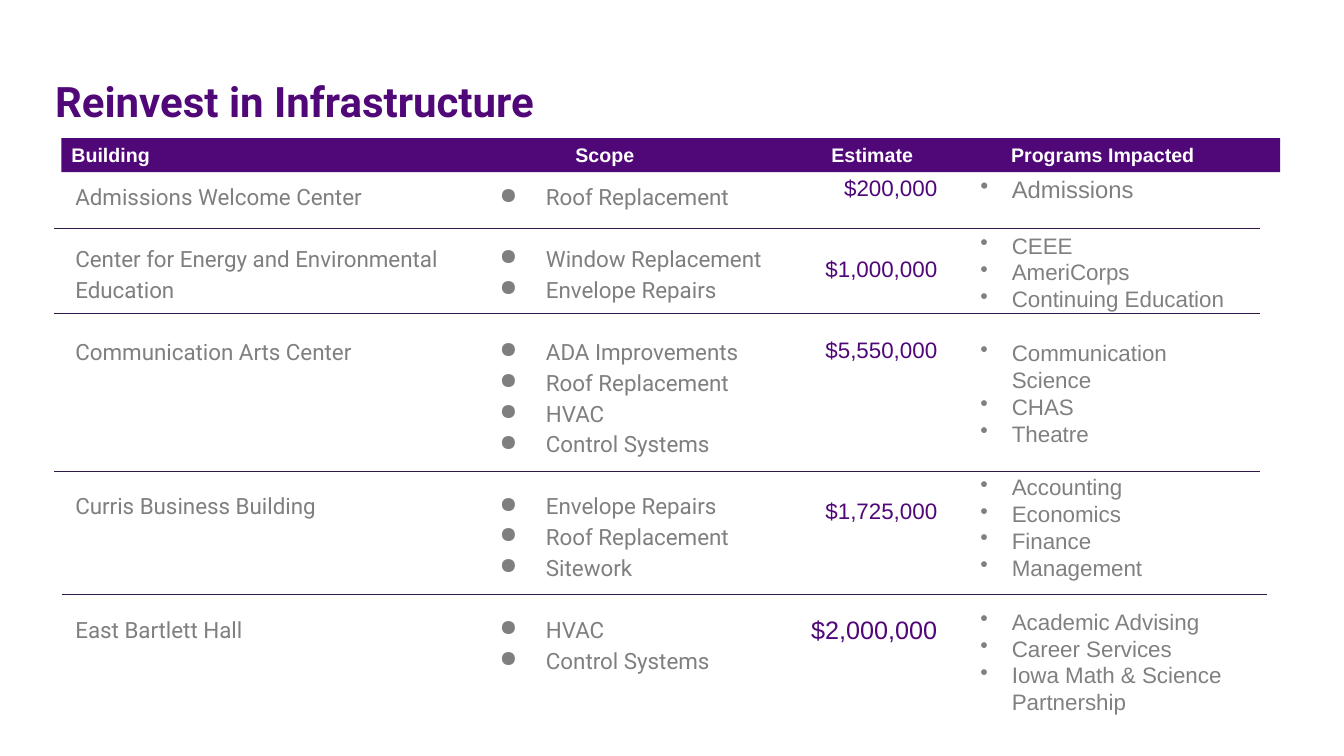
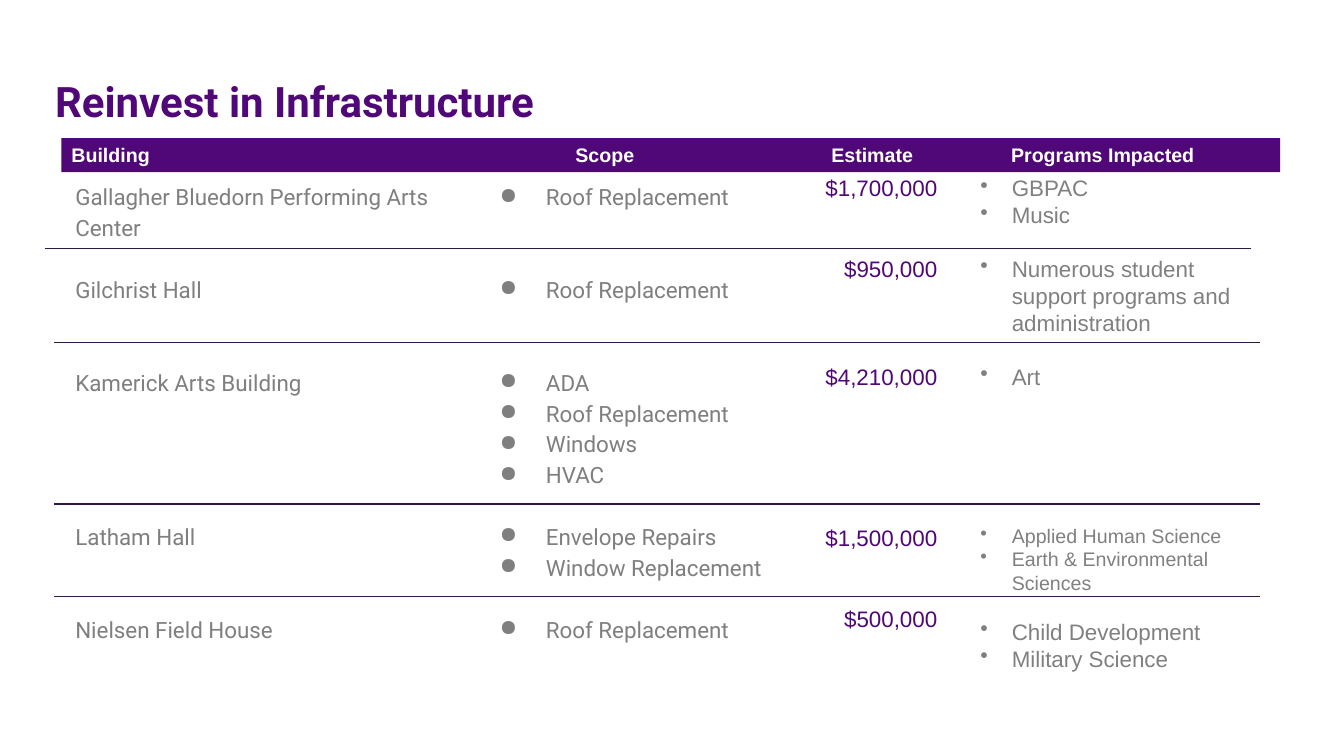
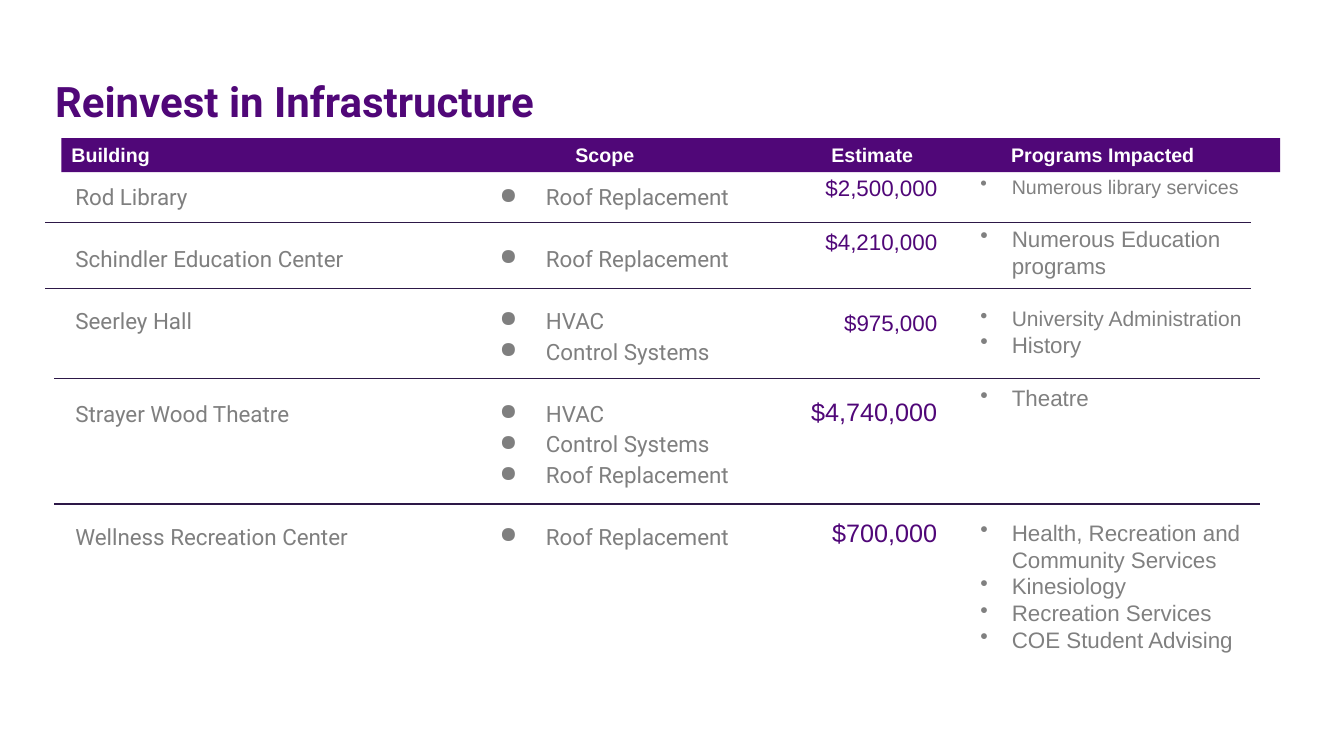
from collections import namedtuple
from dataclasses import dataclass

from lxml.etree import SubElement
from pptx import Presentation
from pptx.dml.color import RGBColor
from pptx.enum.shapes import MSO_CONNECTOR, MSO_SHAPE
from pptx.enum.text import MSO_ANCHOR, MSO_AUTO_SIZE, PP_ALIGN
from pptx.oxml.ns import qn
from pptx.util import Cm, Pt


@dataclass(frozen=True)
class Theme:
    purple: str = "500778"
    rule: str = "2D1847"
    grey: str = "7F7F7F"
    soft: str = "808080"
    white: str = "FFFFFF"
    head: str = "Roboto"
    body: str = "Arial"
    title: int = 30
    text: int = 16
    band: int = 14
    thin: float = 0.75


@dataclass(frozen=True)
class Style:
    font: str
    color: str
    pitch: float          # line height as a multiple of the type size
    pad: float            # inset above and below the text, in cm
    left: float = 0
    hang: float = 0
    mark: str = ""
    lead: float = 1.0
    align: PP_ALIGN = PP_ALIGN.LEFT
    grow: bool = False


T = Theme()
NAMES = Style(T.head, T.grey, 1.38, 0.25, left=0.51, lead=1.15)
SCOPE = Style(T.head, T.grey, 1.38, 0.25, left=1.7, hang=-1.17, mark="●", lead=1.15)
COSTS = Style(T.body, T.purple, 1.2, 0.13, align=PP_ALIGN.RIGHT, grow=True)
PROGS = Style(T.body, T.soft, 1.2, 0.13, left=0.79, hang=-0.79, mark="•", grow=True)

# Column boxes: left edge and width; all share one top
COLS = [(NAMES, 1.14, 10.41), (SCOPE, 11.81, 12.07),
        (COSTS, 18.69, 5.18), (PROGS, 24.46, 7.29)]
TOP = 4.27
TALL = 12.65
SPAN = 30.38              # length of every row rule
HEADS = ["Building", "Scope", "Estimate", "Programs Impacted"]
STOPS = [12.7, 19.15, 23.68]

Group = namedtuple("Group", "gap texts size")
Page = namedtuple("Page", "cols tall rules")


def grp(gap, *texts, size=T.text):
    """Lines that belong together, set off by a gap counted in lines."""
    return Group(gap, texts, size)


PAGES = [
    Page(
        cols=[
            [grp(0, "Admissions Welcome Center"),
             grp(1, "Center for Energy and Environmental Education"),
             grp(1, "Communication Arts Center"),
             grp(4, "Curris Business Building"),
             grp(3, "East Bartlett Hall")],
            [grp(0, "Roof Replacement"),
             grp(1, "Window Replacement", "Envelope Repairs"),
             grp(1, "ADA Improvements", "Roof Replacement", "HVAC", "Control Systems"),
             grp(1, "Envelope Repairs", "Roof Replacement", "Sitework"),
             grp(1, "HVAC", "Control Systems")],
            [grp(0, "$200,000"), grp(2, "$1,000,000"), grp(2, "$5,550,000"),
             grp(5, "$1,725,000"), grp(3, "$2,000,000", size=18)],
            [grp(0, "Admissions", size=17),
             grp(1.06, "CEEE", "AmeriCorps", "Continuing Education"),
             grp(1, "Communication Science", "CHAS", "Theatre"),
             grp(1, "Accounting", "Economics", "Finance", "Management"),
             grp(1, "Academic Advising", "Career Services",
                 "Iowa Math & Science Partnership")],
        ],
        tall=[TALL, TALL, 13.0, 14.02],
        rules=[(1.37, 5.77), (1.37, 7.9), (1.37, 11.89), (1.55, 14.99)]),
    Page(
        cols=[
            [grp(0, "Gallagher Bluedorn Performing Arts Center"),
             grp(1, "Gilchrist Hall"), grp(2, "Kamerick Arts Building"),
             grp(4, "Latham Hall"), grp(2, "Nielsen Field House")],
            [grp(0, "Roof Replacement"),
             grp(2, "Roof Replacement"),
             grp(2, "ADA", "Roof Replacement", "Windows", "HVAC"),
             grp(1, "Envelope Repairs", "Window Replacement"),
             grp(1, "Roof Replacement")],
            [grp(0, "$1,700,000"), grp(2, "$950,000"), grp(3, "$4,210,000"),
             grp(5, "$1,500,000"), grp(2, "$500,000")],
            [grp(0, "GBPAC", "Music"),
             grp(1, "Numerous student support programs and administration"),
             grp(1, "Art"),
             grp(5.7, "Applied Human Science", "Earth & Environmental Sciences",
                 size=14),
             grp(0.88, "Child Development", "Military Science")],
        ],
        tall=[TALL, TALL, 12.65, 12.9],
        rules=[(1.14, 6.27), (1.37, 8.64), (1.37, 12.7), (1.37, 15.04)]),
    Page(
        cols=[
            [grp(0, "Rod Library"), grp(1, "Schindler Education Center"),
             grp(1, "Seerley Hall"), grp(2, "Strayer Wood Theatre"),
             grp(3, "Wellness Recreation Center")],
            [grp(0, "Roof Replacement"),
             grp(1, "Roof Replacement"),
             grp(1, "HVAC", "Control Systems"),
             grp(1, "HVAC", "Control Systems", "Roof Replacement"),
             grp(1, "Roof Replacement")],
            [grp(0, "$2,500,000"), grp(1, "$4,210,000"), grp(2, "$975,000"),
             grp(2, "$4,740,000", size=18), grp(3, "$700,000", size=18)],
            [grp(0, "Numerous library services", size=14),
             grp(1, "Numerous Education programs"),
             grp(1.06, "University Administration", size=15),
             grp(0, "History"),
             grp(1, "Theatre"),
             grp(4, "Health, Recreation and Community Services", "Kinesiology",
                 "Recreation Services", "COE Student Advising")],
        ],
        tall=[TALL, TALL, 9.75, 12.45],
        rules=[(1.14, 5.61), (1.14, 7.26), (1.37, 9.53), (1.37, 12.7)]),
]


def paint(par, font, size, color, bold=False):
    par.font.name = font
    par.font.size = Pt(size)
    par.font.bold = bold
    par.font.color.rgb = RGBColor.from_string(color)


def frame(shape, pad):
    text = shape.text_frame
    text.word_wrap = True
    text.margin_left = text.margin_right = Cm(0.25)
    text.margin_top = text.margin_bottom = Cm(pad)
    return text


def indent(par, style):
    """Set the indents and the bullet of one paragraph."""
    props = par._p.get_or_add_pPr()
    props.set("marL", str(Cm(style.left)))
    props.set("indent", str(Cm(style.hang)))
    if style.mark:
        tint = SubElement(props, qn("a:buClr"))
        SubElement(tint, qn("a:srgbClr")).set("val", style.color)
        SubElement(props, qn("a:buChar")).set("char", style.mark)


def add_title(slide, box):
    text = frame(slide.shapes.add_textbox(*map(Cm, box)), 0.25)
    par = text.paragraphs[0]
    par.text = "Reinvest in Infrastructure"
    paint(par, T.head, T.title, T.purple, True)


def add_band(slide, box):
    """Purple heading band, its labels set on tab stops."""
    band = slide.shapes.add_shape(MSO_SHAPE.RECTANGLE, *map(Cm, box))
    band.shadow.inherit = False
    band.fill.solid()
    band.fill.fore_color.rgb = RGBColor.from_string(T.purple)
    band.line.fill.background()
    text = frame(band, 0.13)
    text.vertical_anchor = MSO_ANCHOR.MIDDLE
    par = text.paragraphs[0]
    par.text = "\t".join(HEADS)
    par.alignment = PP_ALIGN.LEFT
    tabs = SubElement(par._p.get_or_add_pPr(), qn("a:tabLst"))
    for stop in STOPS:
        tab = SubElement(tabs, qn("a:tab"))
        tab.set("pos", str(Cm(stop)))
        tab.set("algn", "l")
    paint(par, T.body, T.band, T.white, True)


def add_col(slide, box, style, groups):
    text = frame(slide.shapes.add_textbox(*map(Cm, box)), style.pad)
    if style.grow:
        text.auto_size = MSO_AUTO_SIZE.SHAPE_TO_FIT_TEXT
    par = text.paragraphs[0]
    for nth, group in enumerate(groups):
        for row, line in enumerate(group.texts):
            if nth or row:
                par = text.add_paragraph()
            par.text = line
            indent(par, style)
            par.alignment = style.align
            par.line_spacing = style.lead
            gap = 0 if row else group.gap * group.size * style.pitch
            par.space_before = Pt(round(gap, 1))
            paint(par, style.font, group.size, style.color)


def add_rule(slide, left, top):
    rule = slide.shapes.add_connector(
        MSO_CONNECTOR.STRAIGHT, Cm(left + SPAN), Cm(top), Cm(left), Cm(top))
    rule.line.color.rgb = RGBColor.from_string(T.rule)
    rule.line.width = Pt(T.thin)
    SubElement(rule._element.spPr, qn("a:effectLst"))


def add_page(deck, page):
    slide = deck.slides.add_slide(deck.slide_layouts[6])
    add_title(slide, (1.14, 1.65, 31.55, 2.31))
    for (style, left, width), tall, groups in zip(COLS, page.tall, page.cols):
        add_col(slide, (left, TOP, width, tall), style, groups)
    for left, top in page.rules:
        add_rule(slide, left, top)
    add_band(slide, (1.55, 3.48, 30.71, 0.86))


def main():
    deck = Presentation()
    deck.slide_width, deck.slide_height = Cm(33.87), Cm(19.05)
    for page in PAGES:
        add_page(deck, page)
    deck.save("out.pptx")


if __name__ == "__main__":
    main()
